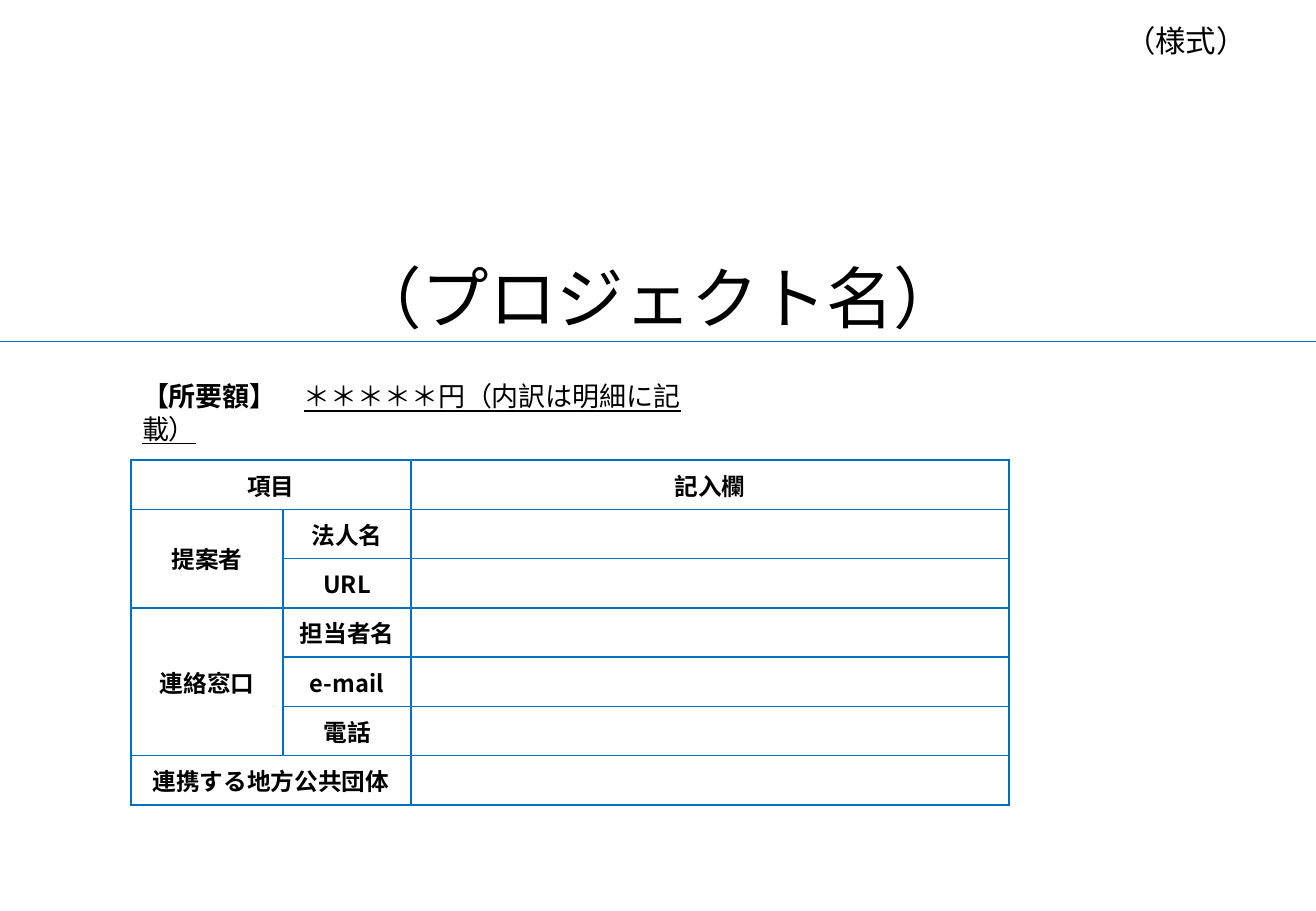
from dataclasses import dataclass

from lxml.etree import SubElement
from pptx import Presentation
from pptx.dml.color import RGBColor
from pptx.enum.shapes import MSO_CONNECTOR
from pptx.enum.text import MSO_ANCHOR, PP_ALIGN
from pptx.oxml.ns import qn
from pptx.slide import Slide
from pptx.table import _Cell
from pptx.text.text import _Run
from pptx.util import Cm, Pt

FONT = "Noto Sans CJK JP"
COLORS = {"text": "000000", "rule": "0070C0"}
SLIDE_WIDTH = 27.51
SLIDE_HEIGHT = 19.05
RULE_TOP = 7.14
COLUMN_WIDTHS = (3.18, 2.67, 12.5)
ROW_HEIGHT = 1.03
ENTRY_SIZE = 14


@dataclass(frozen=True)
class Phrase:
    text: str
    bold: bool = False
    underline: bool = False


@dataclass(frozen=True)
class Caption:
    left: float
    top: float
    width: float
    height: float
    size: int
    phrases: tuple[Phrase, ...]
    align: PP_ALIGN = PP_ALIGN.LEFT
    anchor: MSO_ANCHOR = MSO_ANCHOR.TOP


@dataclass(frozen=True)
class Entry:
    row: int
    column: int
    text: str
    rows: int = 1
    columns: int = 1


CAPTIONS = (
    Caption(0, 5.28, SLIDE_WIDTH, 1.86, 40, (Phrase("（プロジェクト名）"),),
            PP_ALIGN.CENTER, MSO_ANCHOR.MIDDLE),
    Caption(2.72, 7.82, 12.09, 0.94, 16,
            (Phrase("【所要額】\u3000".replace("\u3000", "　"), bold=True),
             Phrase("＊＊＊＊＊円（内訳は明細に記載）", underline=True))),
    Caption(23.27, 0.33, 3.07, 1.02, 18, (Phrase("（様式）"),)),
)

ENTRIES = (
    Entry(0, 0, "項目", columns=2),
    Entry(0, 2, "記入欄"),
    Entry(1, 0, "提案者", rows=2),
    Entry(1, 1, "法人名"),
    Entry(2, 1, "URL"),
    Entry(3, 0, "連絡窓口", rows=3),
    Entry(3, 1, "担当者名"),
    Entry(4, 1, "e-mail"),
    Entry(5, 1, "電話"),
    Entry(6, 0, "連携する地方公共団体", columns=2),
)


def color(name: str) -> RGBColor:
    return RGBColor.from_string(COLORS[name])


def format_run(run: _Run, size: int, bold: bool, underline: bool = False) -> None:
    run.font.name = FONT
    run.font.size = Pt(size)
    run.font.bold = bold
    run.font.underline = underline
    run.font.color.rgb = color("text")
    SubElement(run.font._element, qn("a:ea"), typeface=FONT)


def draw_caption(slide: Slide, caption: Caption) -> None:
    box = slide.shapes.add_textbox(Cm(caption.left), Cm(caption.top),
                                   Cm(caption.width), Cm(caption.height))
    frame = box.text_frame
    frame.word_wrap = True
    frame.vertical_anchor = caption.anchor
    paragraph = frame.paragraphs[0]
    paragraph.alignment = caption.align
    for phrase in caption.phrases:
        run = paragraph.add_run()
        run.text = phrase.text
        format_run(run, caption.size, phrase.bold, phrase.underline)


def draw_rule(slide: Slide) -> None:
    rule = slide.shapes.add_connector(MSO_CONNECTOR.STRAIGHT, Cm(0), Cm(RULE_TOP),
                                      Cm(SLIDE_WIDTH), Cm(RULE_TOP))
    rule.line.color.rgb = color("rule")
    rule.line.width = Pt(0.75)
    SubElement(rule._element.spPr, qn("a:effectLst"))


def outline_cell(cell: _Cell) -> None:
    properties = cell._tc.get_or_add_tcPr()
    for side in ("lnL", "lnR", "lnT", "lnB"):
        border = SubElement(properties, qn(f"a:{side}"), w=str(Pt(1)))
        solid = SubElement(border, qn("a:solidFill"))
        SubElement(solid, qn("a:srgbClr"), val=COLORS["rule"])
    cell.fill.background()


def draw_form(slide: Slide) -> None:
    row_count = 1 + max(entry.row for entry in ENTRIES)
    form = slide.shapes.add_table(row_count, len(COLUMN_WIDTHS), Cm(2.74), Cm(9.62),
                                  Cm(sum(COLUMN_WIDTHS)),
                                  Cm(ROW_HEIGHT * row_count)).table
    form.first_row = False
    form.horz_banding = False
    for column, width in zip(form.columns, COLUMN_WIDTHS):
        column.width = Cm(width)
    for row in form.rows:
        row.height = Cm(ROW_HEIGHT)
    for cell in form.iter_cells():
        outline_cell(cell)
        cell.vertical_anchor = MSO_ANCHOR.MIDDLE
        SubElement(cell.text_frame.paragraphs[0]._p, qn("a:endParaRPr"),
                   sz=str(ENTRY_SIZE * 100))
    for entry in ENTRIES:
        cell = form.cell(entry.row, entry.column)
        if entry.rows > 1 or entry.columns > 1:
            cell.merge(form.cell(entry.row + entry.rows - 1,
                                 entry.column + entry.columns - 1))
        paragraph = cell.text_frame.paragraphs[0]
        paragraph.text = entry.text
        paragraph.alignment = PP_ALIGN.CENTER
        format_run(paragraph.runs[0], ENTRY_SIZE, bold=True)


def main() -> None:
    presentation = Presentation()
    presentation.slide_width = Cm(SLIDE_WIDTH)
    presentation.slide_height = Cm(SLIDE_HEIGHT)
    slide = presentation.slides.add_slide(presentation.slide_layouts[6])
    for caption in CAPTIONS:
        draw_caption(slide, caption)
    draw_rule(slide)
    draw_form(slide)
    presentation.save("out.pptx")


if __name__ == "__main__":
    main()
